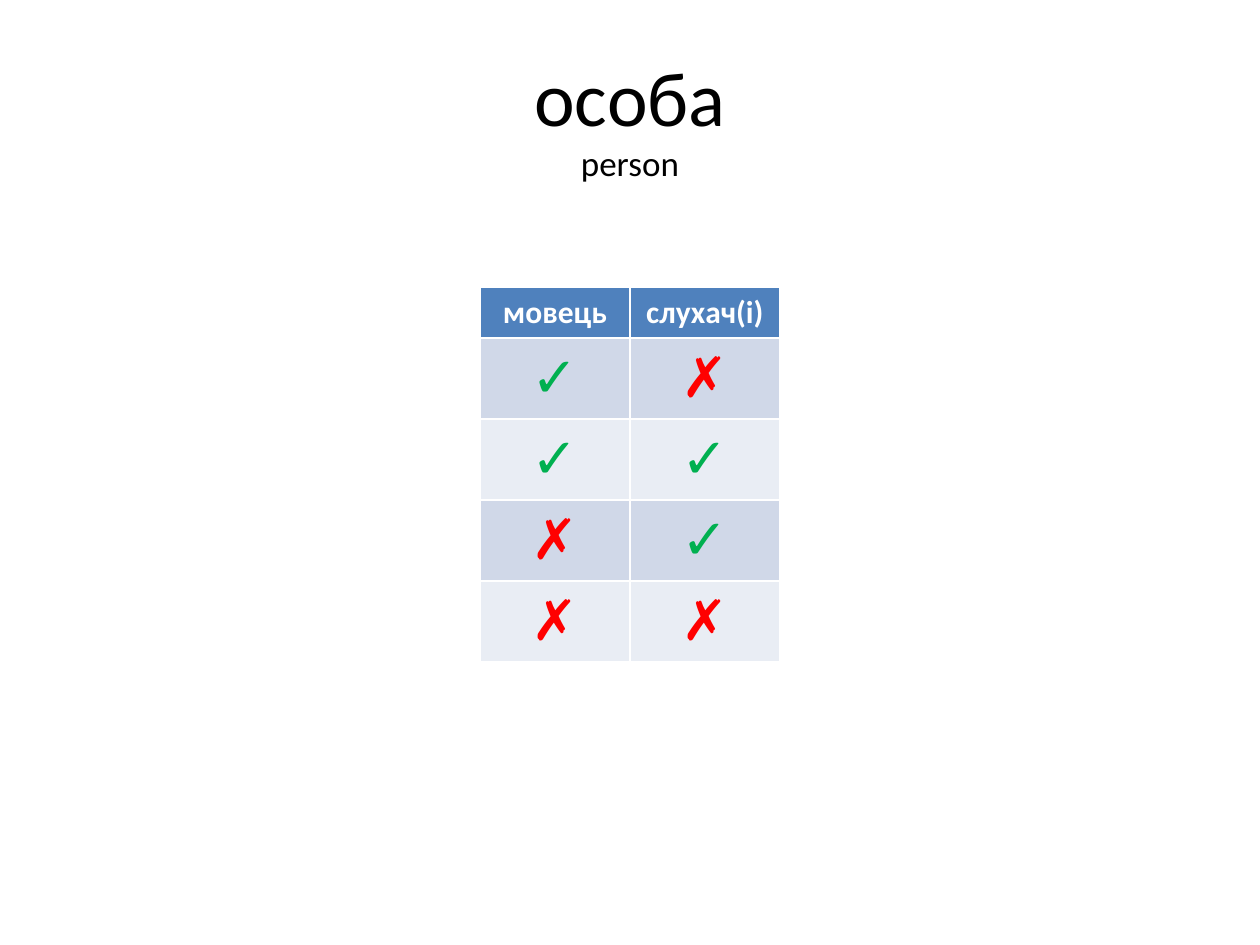
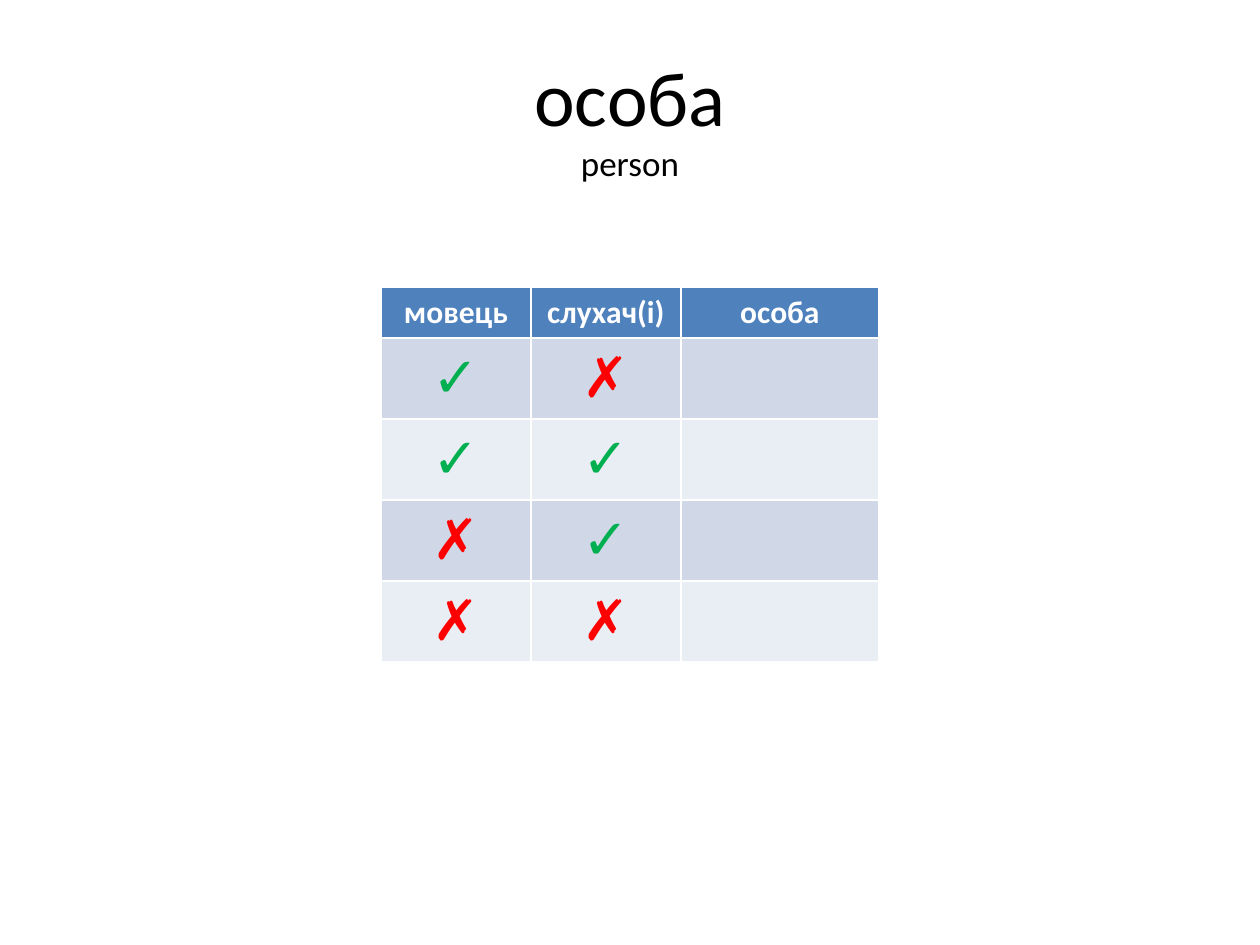
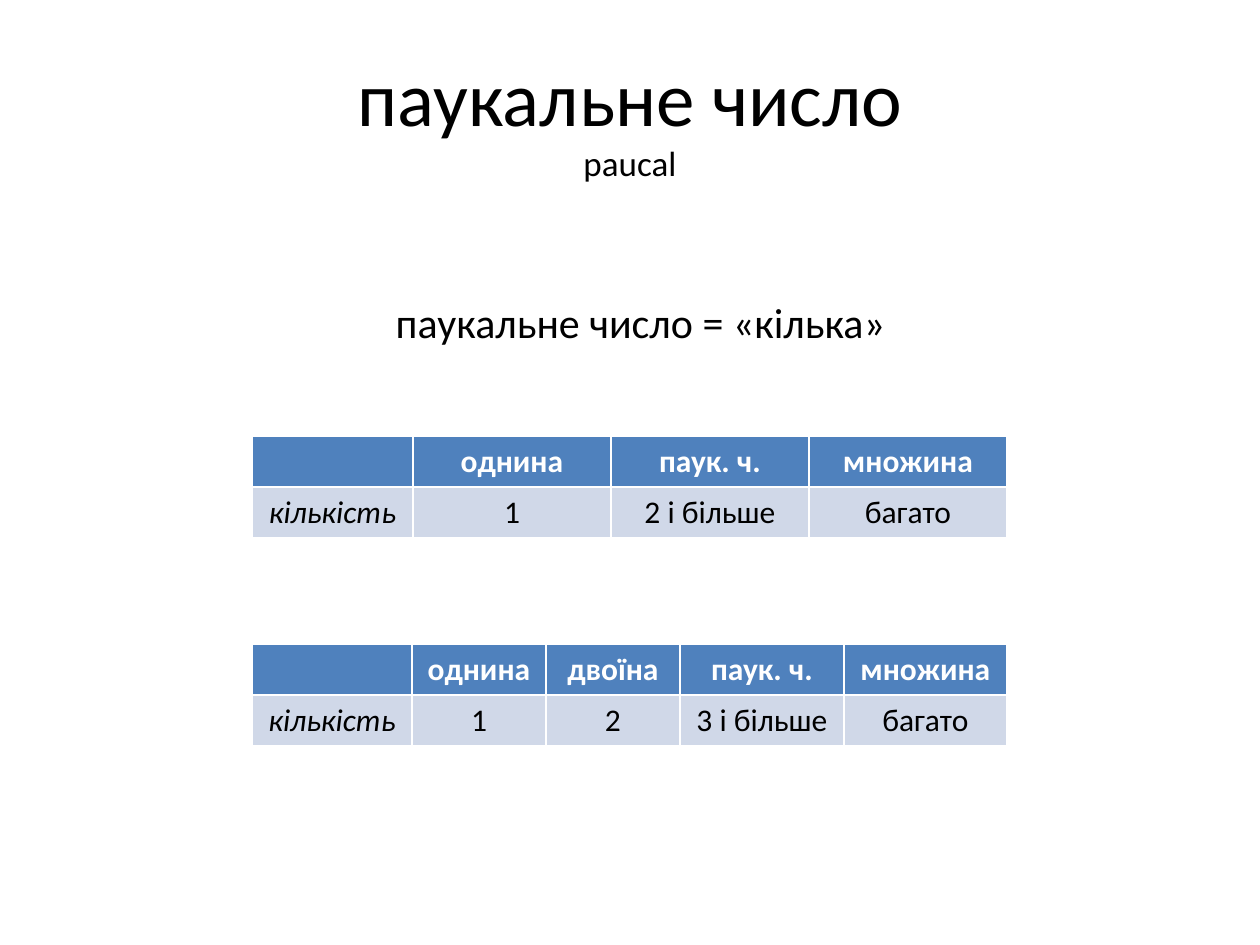
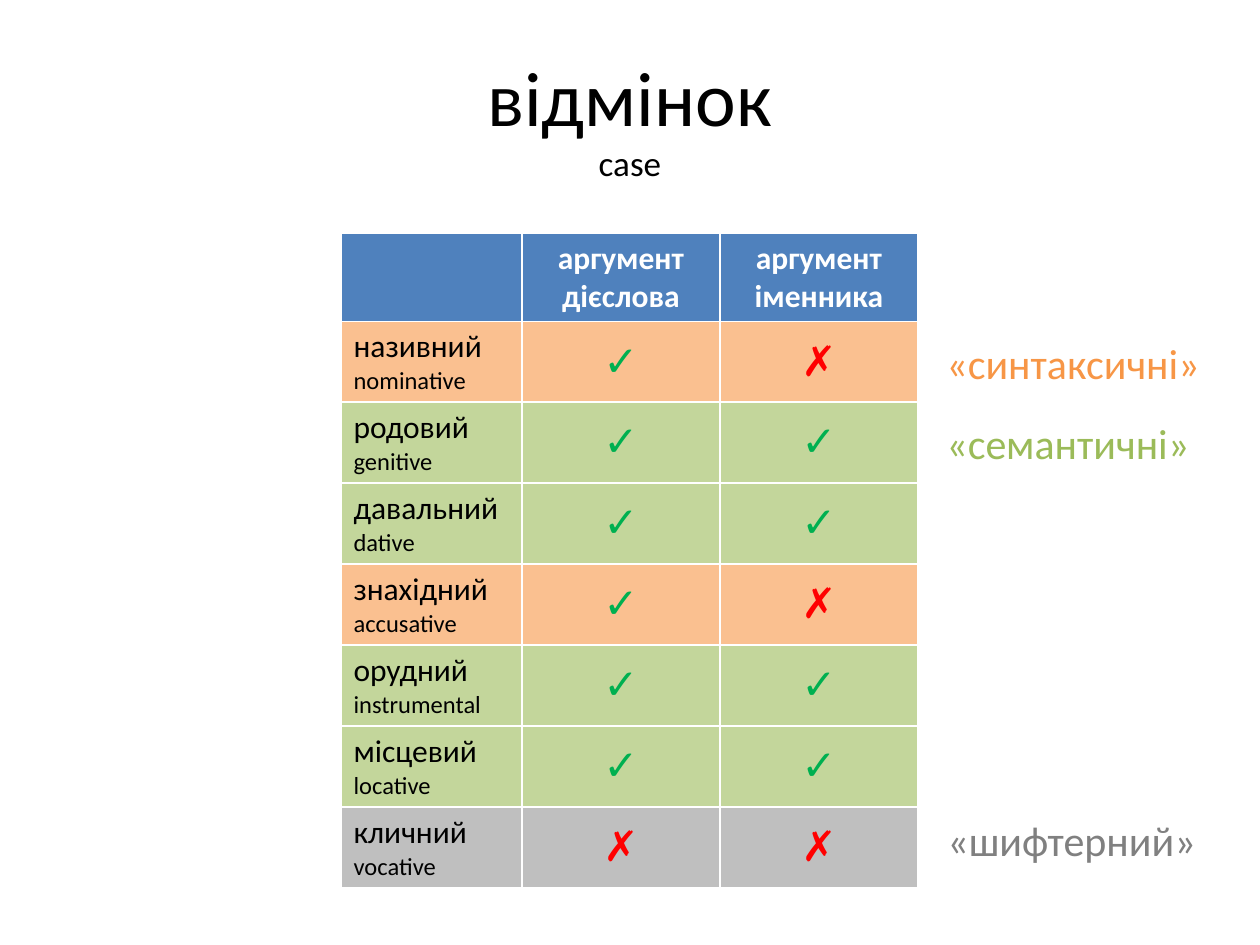
from dataclasses import dataclass

from pptx import Presentation
from pptx.dml.color import RGBColor
from pptx.enum.text import MSO_ANCHOR as Anchor, MSO_AUTO_SIZE as AutoSize, PP_ALIGN as Align
from pptx.util import Emu, Pt

PX = 7257  # EMU per px, 126 px to the inch
PAGE_WIDTH, PAGE_HEIGHT = 1260, 945
FONT = "Calibri"
COLORS = {
    "text": "000000",
    "header": "4F81BD",
    "header_text": "FFFFFF",
    "band_dark": "D0D8E8",
    "band_light": "E9EDF4",
    "yes": "00B050",
    "no": "FF0000",
    "syntactic": "FAC090",
    "semantic": "C3D69B",
    "shifter": "BFBFBF",
    "syntactic_label": "F79646",
    "semantic_label": "9BBB59",
    "shifter_label": "808080",
}
YES, NO = "✓", "✗"
MARK_COLORS = {YES: "yes", NO: "no"}
BANDS = ("band_dark", "band_light")

HEADER_HEIGHT = 51
TALL_ROW = 81
MARK_COLUMN, WIDE_COLUMN = 150, 198


@dataclass(frozen=True)
class TextStyle:
    size: int = 18
    color: str = "text"
    bold: bool = False
    italic: bool = False


@dataclass(frozen=True)
class Grid:
    top: int
    columns: tuple[int, ...]
    rows: tuple[tuple[str, ...], ...]
    fills: tuple[str, ...] = BANDS
    header_height: int = HEADER_HEIGHT
    row_height: int = TALL_ROW
    mark_size: int = 32


@dataclass(frozen=True)
class Label:
    text: str
    left: int
    top: int
    width: int
    color: str


@dataclass(frozen=True)
class Case:
    name: str
    english: str
    kind: str
    with_verb: str
    with_noun: str


HEADER_STYLE = TextStyle(color="header_text", bold=True)

PERSON_ROWS = (
    ("мовець", "слухач(і)"),
    (YES, NO),
    (YES, YES),
    (NO, YES),
    (NO, NO),
)
PERSON_HEADERS = ("особа", "", "", "", "")

CASES = (
    Case("називний", "nominative", "syntactic", YES, NO),
    Case("родовий", "genitive", "semantic", YES, YES),
    Case("давальний", "dative", "semantic", YES, YES),
    Case("знахідний", "accusative", "syntactic", YES, NO),
    Case("орудний", "instrumental", "semantic", YES, YES),
    Case("місцевий", "locative", "semantic", YES, YES),
    Case("кличний", "vocative", "shifter", NO, NO),
)

CASE_LABELS = (
    Label("«синтаксичні»", 934, 331, 281, "syntactic_label"),
    Label("«семантичні»", 934, 411, 271, "semantic_label"),
    Label("«шифтерний»", 935, 808, 277, "shifter_label"),
)


def px(length: int) -> Emu:
    return Emu(length * PX)


def style_run(span, style: TextStyle) -> None:
    font = span.font
    font.name = FONT
    font.size = Pt(style.size)
    font.bold = style.bold
    font.italic = style.italic
    font.color.rgb = RGBColor.from_string(COLORS[style.color])


def add_text(page, text: str, left: int, top: int, width: int, height: int,
             styles: tuple[TextStyle, ...], align=Align.CENTER):
    """Add a text box whose runs take the given styles in order."""
    box = page.shapes.add_textbox(px(left), px(top), px(width), px(height))
    frame = box.text_frame
    frame.word_wrap = True
    para = frame.paragraphs[0]
    para.text = text
    para.alignment = align
    for span, style in zip(para.runs, styles):
        style_run(span, style)
    return frame


def add_page(deck, title: str, english: str):
    page = deck.slides.add_slide(deck.slide_layouts[6])
    frame = add_text(page, f"{title}\v{english}", 63, 38, 1134, 157,
                     (TextStyle(44), TextStyle(20)))
    frame.vertical_anchor = Anchor.MIDDLE
    return page


def cell_style(text: str, line: int, is_header: bool, mark_size: int) -> TextStyle:
    if is_header:
        return HEADER_STYLE
    if text in MARK_COLORS:
        return TextStyle(mark_size, MARK_COLORS[text], bold=True)
    if line:
        return TextStyle(14)
    return TextStyle(italic=text == "кількість")


def fill_cell(cell, text: str, fill: str, is_header: bool, mark_size: int) -> None:
    cell.fill.solid()
    cell.fill.fore_color.rgb = RGBColor.from_string(COLORS[fill])
    cell.vertical_anchor = Anchor.MIDDLE
    cell.text_frame.text = text
    paras = cell.text_frame.paragraphs
    for line, para in enumerate(paras):
        para.alignment = Align.LEFT if len(paras) > 1 else Align.CENTER
        for span in para.runs:
            style_run(span, cell_style(span.text, line, is_header, mark_size))


def add_grid(page, grid: Grid) -> None:
    """Add a horizontally centred table; body fills repeat in a cycle."""
    width = sum(grid.columns)
    heights = [grid.header_height] + [grid.row_height] * (len(grid.rows) - 1)
    table = page.shapes.add_table(
        len(grid.rows), len(grid.columns), px((PAGE_WIDTH - width) // 2),
        px(grid.top), px(width), px(sum(heights))).table
    for column, column_width in zip(table.columns, grid.columns):
        column.width = px(column_width)
    for index, (texts, height) in enumerate(zip(grid.rows, heights)):
        table.rows[index].height = px(height)
        is_header = index == 0
        fill = "header" if is_header else grid.fills[(index - 1) % len(grid.fills)]
        for column, text in enumerate(texts):
            fill_cell(table.cell(index, column), text, fill, is_header, grid.mark_size)


def add_label(page, label: Label) -> None:
    frame = add_text(page, label.text, label.left, label.top, label.width, 63,
                     (TextStyle(24, label.color),), Align.LEFT)
    frame.word_wrap = False
    frame.auto_size = AutoSize.SHAPE_TO_FIT_TEXT


def build_person(deck) -> None:
    page = add_page(deck, "особа", "person")
    add_grid(page, Grid(287, (MARK_COLUMN,) * 2, PERSON_ROWS))


def build_person_with_names(deck) -> None:
    page = add_page(deck, "особа", "person")
    rows = tuple(marks + (name,) for marks, name in zip(PERSON_ROWS, PERSON_HEADERS))
    add_grid(page, Grid(287, (MARK_COLUMN, MARK_COLUMN, WIDE_COLUMN), rows))


def build_paucal(deck) -> None:
    page = add_page(deck, "паукальне число", "paucal")
    frame = add_text(page, "паукальне число = «кілька»", 105, 265, 1071, 102,
                     (TextStyle(24),))
    frame.paragraphs[0].line_spacing = 1.5
    add_grid(page, Grid(436, (161,) + (WIDE_COLUMN,) * 3, (
        ("", "однина", "паук. ч.", "множина"),
        ("кількість", "1", "2 і більше", "багато"),
    ), row_height=HEADER_HEIGHT))
    add_grid(page, Grid(644, (160, 134, 134, 164, 163), (
        ("", "однина", "двоїна", "паук. ч.", "множина"),
        ("кількість", "1", "2", "3 і більше", "багато"),
    ), row_height=HEADER_HEIGHT))


def build_case(deck) -> None:
    page = add_page(deck, "відмінок", "case")
    header = ("", "аргумент\vдієслова", "аргумент\vіменника")
    rows = tuple((f"{case.name}\n{case.english}", case.with_verb, case.with_noun)
                 for case in CASES)
    add_grid(page, Grid(233, (181, WIDE_COLUMN, WIDE_COLUMN), (header,) + rows,
                        fills=tuple(case.kind for case in CASES),
                        header_height=TALL_ROW, mark_size=24))
    for label in CASE_LABELS:
        add_label(page, label)


def main() -> None:
    deck = Presentation()
    deck.slide_width, deck.slide_height = px(PAGE_WIDTH), px(PAGE_HEIGHT)
    for build in (build_person, build_person_with_names, build_paucal, build_case):
        build(deck)
    deck.save("out.pptx")


if __name__ == "__main__":
    main()
